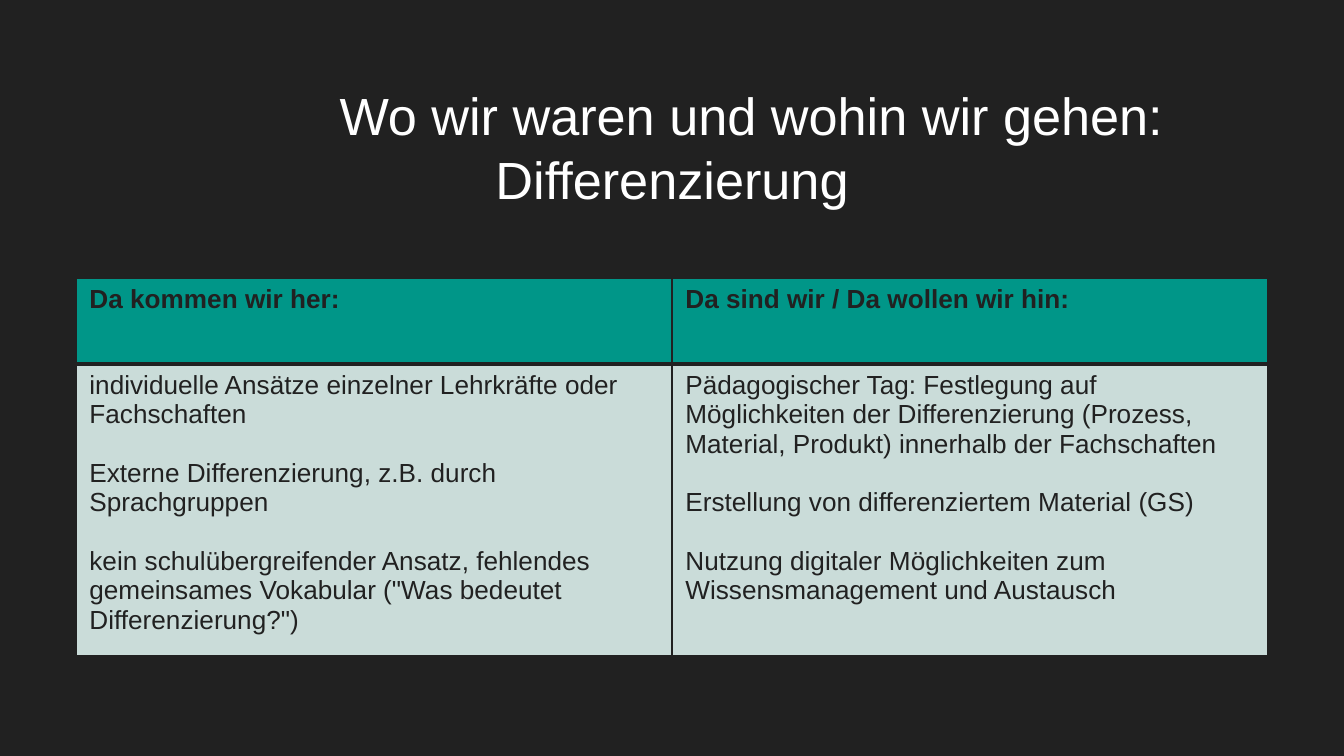
from lxml.etree import SubElement
from pptx import Presentation
from pptx.dml.color import RGBColor
from pptx.enum.text import PP_ALIGN as Align
from pptx.oxml.ns import qn
from pptx.util import Pt

COLORS = {"dark": "212121", "white": "FFFFFF", "teal": "009688", "mist": "CADCD9"}
SCALE = 914400 / 134.4
HEADINGS = ["Da kommen wir her:", "Da sind wir / Da wollen wir hin:"]
POINTS = [
    [
        "individuelle Ansätze einzelner Lehrkräfte oder Fachschaften",
        "Externe Differenzierung, z.B. durch Sprachgruppen",
        'kein schulübergreifender Ansatz, fehlendes gemeinsames Vokabular ("Was bedeutet Differenzierung?")',
    ],
    [
        "Pädagogischer Tag: Festlegung auf Möglichkeiten der Differenzierung (Prozess, Material, Produkt) innerhalb der Fachschaften",
        "Erstellung von differenziertem Material (GS)",
        "Nutzung digitaler Möglichkeiten zum Wissensmanagement und Austausch",
    ],
]


def px(length):
    return round(length * SCALE)


def rgb(name):
    return RGBColor.from_string(COLORS[name])


class ComparisonSlide:
    """Draws a dark slide with a title and a two-column comparison table."""

    font = "Arial"

    def __init__(self, deck):
        self.slide = deck.slides.add_slide(deck.slide_layouts[6])
        fill = self.slide.background.fill
        fill.solid()
        fill.fore_color.rgb = rgb("dark")

    def style(self, paragraph, size, color, bold=False):
        for run in paragraph.runs:
            run.font.name = self.font
            run.font.size = Pt(size)
            run.font.bold = bold
            run.font.color.rgb = rgb(color)

    def title(self, lines, left, top, width, height, first_indent):
        frame = self.slide.shapes.add_textbox(px(left), px(top), px(width), px(height)).text_frame
        frame.word_wrap = True
        frame.margin_left = frame.margin_right = frame.margin_top = frame.margin_bottom = px(13)
        frame.text = "\n".join(lines)
        for line in frame.paragraphs:
            line.alignment = Align.CENTER
            line.line_spacing = 1.03
            self.style(line, 28, "white")
        frame.paragraphs[0]._p.get_or_add_pPr().set("marL", str(px(first_indent)))

    def border(self, cell, edges):
        properties = cell._tc.get_or_add_tcPr()
        for position, (side, width) in enumerate(edges.items()):
            line = properties.makeelement(qn(f"a:{side}"), {"w": str(Pt(width))})
            color = SubElement(SubElement(line, qn("a:solidFill")), qn("a:srgbClr"))
            color.set("val", COLORS["dark"])
            properties.insert(position, line)

    def cell(self, cell, texts, fill, bold, edges):
        cell.fill.solid()
        cell.fill.fore_color.rgb = rgb(fill)
        cell.text_frame.text = "\n".join(texts)
        for index, paragraph in enumerate(cell.text_frame.paragraphs):
            paragraph.space_before = Pt(15.7 if index else 0)
            self.style(paragraph, 14, "dark", bold)
        self.border(cell, edges)

    def table(self, headings, points, left, top, column_width, row_heights):
        table = self.slide.shapes.add_table(
            2, len(headings), px(left), px(top),
            px(column_width * len(headings)), px(sum(row_heights)),
        ).table
        for row, height in zip(table.rows, row_heights):
            row.height = px(height)
        for index, (heading, texts) in enumerate(zip(headings, points)):
            table.columns[index].width = px(column_width)
            edges = {"lnL": 1, "lnR": 1, "lnT": 1, "lnB": 3}
            self.cell(table.cell(0, index), [heading], "teal", True, edges)
            edges = {"lnL": 1, "lnR": 1, "lnT": 3, "lnB": 1}
            self.cell(table.cell(1, index), texts, "mist", False, edges)


def main():
    deck = Presentation()
    deck.slide_width, deck.slide_height = px(1344), px(756)
    comparison = ComparisonSlide(deck)
    comparison.title(
        ["Wo wir waren und wohin wir gehen:", "Differenzierung"], 46, 68, 1252, 177, 158
    )
    comparison.table(HEADINGS, POINTS, 76, 278, 596, [86, 278])
    deck.save("out.pptx")


if __name__ == "__main__":
    main()
